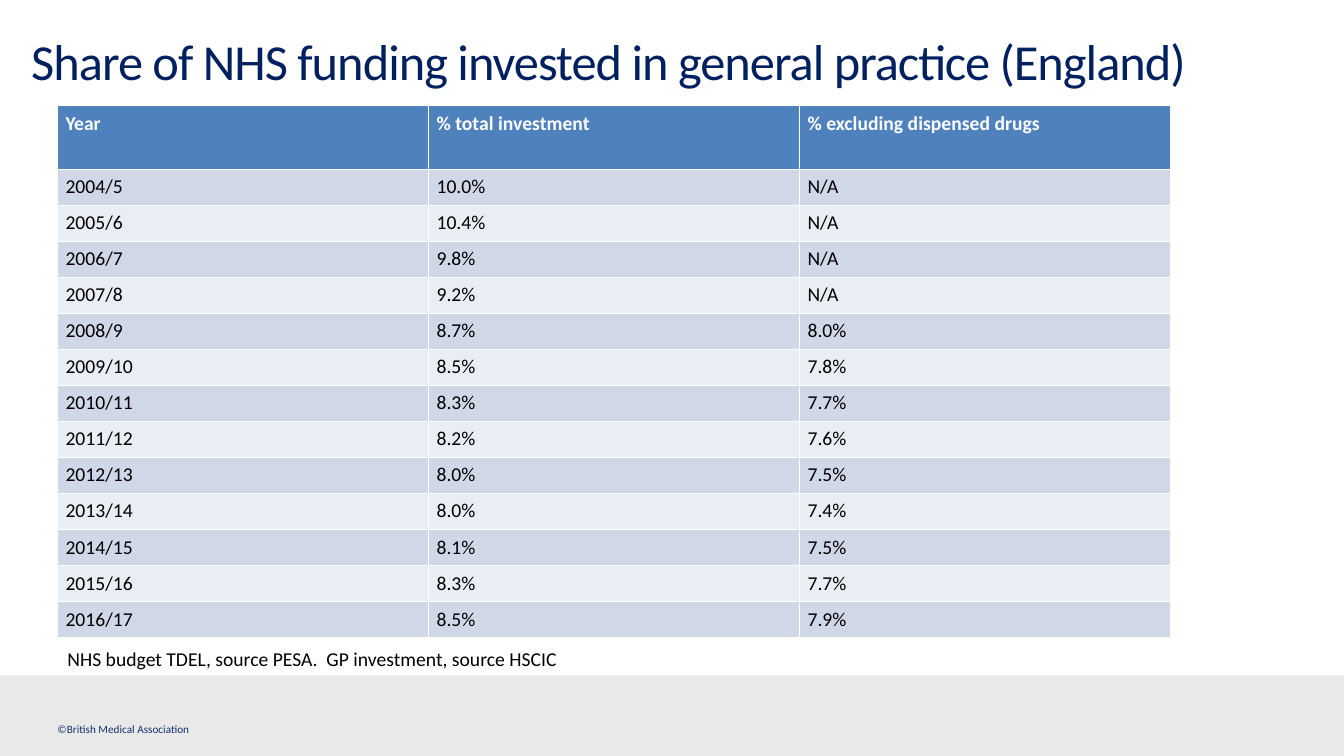
from pptx import Presentation
from pptx import util as u
from pptx.dml.color import RGBColor
from pptx.enum import shapes, text

COLORS = {
    "title": "002060", "header": "4F81BD", "odd": "D0D8E8", "even": "E9EDF4",
    "band": "E9E9E9", "credit": "13316E", "white": "FFFFFF", "black": "000000",
}
HEADINGS = ["Year", "% total investment", "% excluding dispensed drugs"]
SHARES = [
    ["2004/5", "10.0%", "N/A"],
    ["2005/6", "10.4%", "N/A"],
    ["2006/7", "9.8%", "N/A"],
    ["2007/8", "9.2%", "N/A"],
    ["2008/9", "8.7%", "8.0%"],
    ["2009/10", "8.5%", "7.8%"],
    ["2010/11", "8.3%", "7.7%"],
    ["2011/12", "8.2%", "7.6%"],
    ["2012/13", "8.0%", "7.5%"],
    ["2013/14", "8.0%", "7.4%"],
    ["2014/15", "8.1%", "7.5%"],
    ["2015/16", "8.3%", "7.7%"],
    ["2016/17", "8.5%", "7.9%"],
]


def write(frame, words, size, color, bold=False, spacing=None):
    """Fill the frame's first paragraph with one formatted run and return the run."""
    para = frame.paragraphs[0]
    para.alignment = text.PP_ALIGN.LEFT
    para.line_spacing = spacing
    span = para.add_run()
    span.text = words
    font_format = {"name": "Calibri", "size": u.Pt(size), "bold": bold}
    for name, value in font_format.items():
        setattr(span.font, name, value)
    span.font.color.rgb = RGBColor.from_string(COLORS[color])
    return span


def place_frame(shape, left, top, width, height, **frame_format):
    """Move a text shape and set its frame; lengths are in inches."""
    shape.left, shape.top = u.Inches(left), u.Inches(top)
    shape.width, shape.height = u.Inches(width), u.Inches(height)
    frame_format = {"word_wrap": True, "vertical_anchor": text.MSO_ANCHOR.TOP, **frame_format}
    for name, value in frame_format.items():
        setattr(shape.text_frame, name, value)
    return shape.text_frame


deck = Presentation()
deck.slide_width, deck.slide_height = u.Inches(13.33), u.Inches(7.5)
page = deck.slides.add_slide(deck.slide_layouts[5])
no_margins = dict.fromkeys(["margin_left", "margin_top", "margin_right", "margin_bottom"], 0)

# Footer band
band = page.shapes.add_shape(
    shapes.MSO_SHAPE.RECTANGLE, 0, u.Inches(6.7), deck.slide_width, u.Inches(0.8))
band.shadow.inherit = False
band.fill.solid()
band.fill.fore_color.rgb = RGBColor.from_string(COLORS["band"])
band.line.fill.background()

credit = page.shapes.add_textbox(0, 0, 0, 0)
credit_frame = place_frame(credit, 0.57, 7.17, 2.77, 0.13, **no_margins)
credit_frame.vertical_anchor = text.MSO_ANCHOR.MIDDLE
write(credit_frame, "©British Medical Association", 8, "credit")

# Title
title_frame = place_frame(page.shapes.title, 0.31, 0.27, 11.59, 0.78,
                          auto_size=text.MSO_AUTO_SIZE.NONE, **no_margins)
title_span = write(title_frame, "Share of NHS funding invested in general practice (England)",
                   36, "title", spacing=u.Pt(45.3))
title_span.font._element.set("spc", "-70")

# Funding table
table_height, header_height = u.Inches(5.28), u.Inches(0.63)
table = page.shapes.add_table(len(SHARES) + 1, len(HEADINGS), u.Inches(0.57), u.Inches(1.05),
                              u.Inches(11.04), table_height).table
cell_format = {
    "margin_left": u.Inches(0.08), "margin_right": u.Inches(0.08),
    "margin_top": u.Inches(0.04), "margin_bottom": u.Inches(0.04),
}
for row_index, values in enumerate([HEADINGS] + SHARES):
    is_header = row_index == 0
    row_fill = "header" if is_header else "odd" if row_index % 2 else "even"
    table.rows[row_index].height = (
        header_height if is_header else (table_height - header_height) // len(SHARES))
    for cell, value in zip(table.rows[row_index].cells, values):
        for name, setting in cell_format.items():
            setattr(cell, name, setting)
        cell.fill.solid()
        cell.fill.fore_color.rgb = RGBColor.from_string(COLORS[row_fill])
        write(cell.text_frame, value, 14, "white" if is_header else "black", is_header, 1.07)

# Source note
note = page.shapes.add_textbox(0, 0, 0, 0)
note_frame = place_frame(note, 0.57, 6.37, 5.25, 0.34)
write(note_frame, "NHS budget TDEL, source PESA.  GP investment, source HSCIC", 14, "black")

deck.save("out.pptx")
